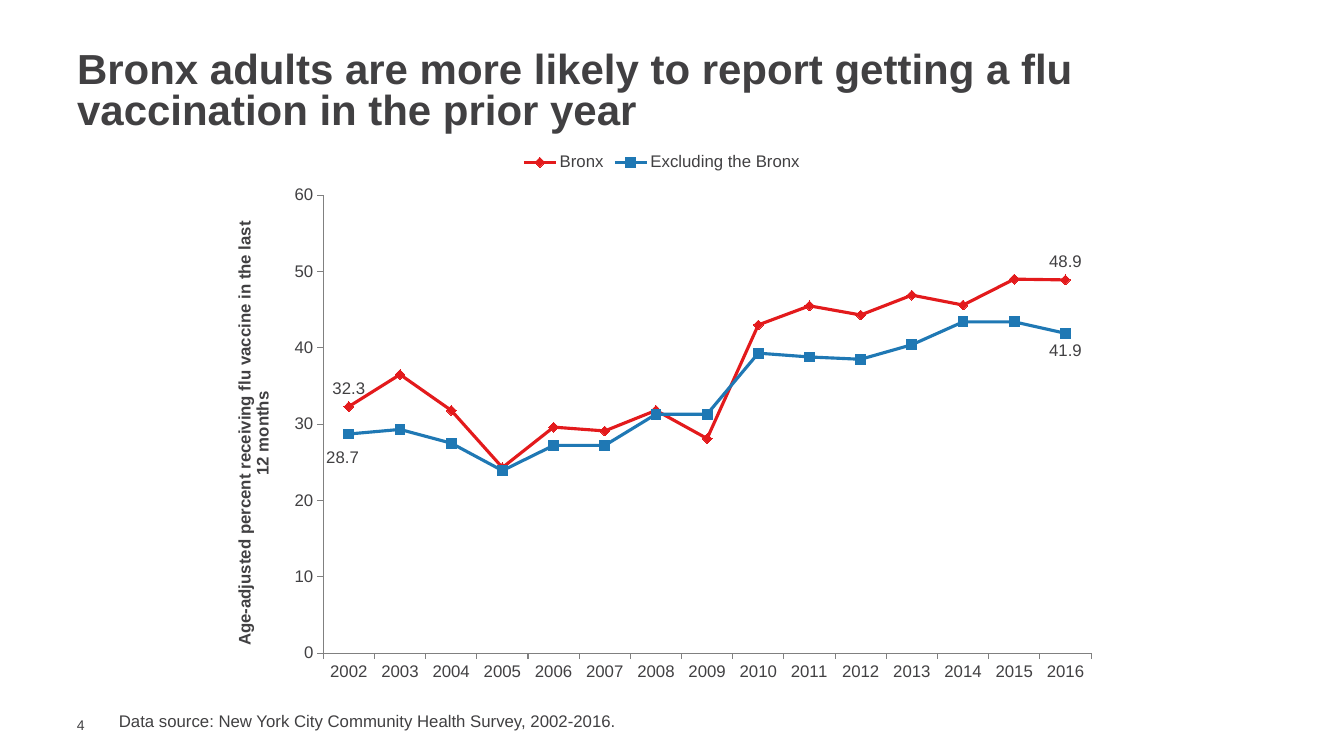
from dataclasses import dataclass

from lxml import etree
from pptx import Presentation
from pptx.chart.data import CategoryChartData
from pptx.dml.color import RGBColor
from pptx.enum.chart import (XL_CHART_TYPE, XL_LABEL_POSITION, XL_LEGEND_POSITION,
                             XL_MARKER_STYLE, XL_TICK_MARK)
from pptx.enum.text import MSO_ANCHOR, PP_ALIGN
from pptx.oxml.ns import qn
from pptx.util import Pt

LINE_MARKERS = XL_CHART_TYPE.LINE_MARKERS
LEGEND_TOP = XL_LEGEND_POSITION.TOP
ABOVE, BELOW = XL_LABEL_POSITION.ABOVE, XL_LABEL_POSITION.BELOW
DIAMOND, SQUARE = XL_MARKER_STYLE.DIAMOND, XL_MARKER_STYLE.SQUARE
OUTSIDE = XL_TICK_MARK.OUTSIDE
LEFT = PP_ALIGN.LEFT
MIDDLE, TOP = MSO_ANCHOR.MIDDLE, MSO_ANCHOR.TOP
PX = 914400 / 100.8


@dataclass(frozen=True)
class Theme:
    font: str = "Arial"
    text: RGBColor = RGBColor(0x41, 0x40, 0x42)
    axis: RGBColor = RGBColor(0x80, 0x80, 0x80)
    bronx: RGBColor = RGBColor(0xE3, 0x1A, 0x1C)
    others: RGBColor = RGBColor(0x1F, 0x78, 0xB4)
    title_size: int = 30
    chart_size: int = 12
    number_size: int = 10


THEME = Theme()


def style_font(font, size, bold=False):
    font.name = THEME.font
    font.size = Pt(size)
    font.bold = bold
    font.color.rgb = THEME.text


def set_layout(parent, index, **values):
    """Insert a manual chart layout at the given child index."""
    layout = etree.Element(qn("c:layout"))
    manual = etree.SubElement(layout, qn("c:manualLayout"))
    for tag, value in values.items():
        etree.SubElement(manual, qn(f"c:{tag}")).set("val", str(value))
    for old in parent.findall(qn("c:layout")):
        parent.remove(old)
    parent.insert(index, layout)


presentation = Presentation()
presentation.slide_width = round(1344 * PX)
presentation.slide_height = round(756 * PX)
slide = presentation.slides.add_slide(presentation.slide_layouts[5])

# Title, slide number and data source
number_box = slide.shapes.add_textbox(0, 0, 0, 0)
source_box = slide.shapes.add_textbox(0, 0, 0, 0)
texts = [
    (slide.shapes.title, (67, 47, 1210, 92), MIDDLE, THEME.title_size, True,
     "Bronx adults are more likely to report getting a flu vaccination in the prior year"),
    (number_box, (67, 716, 43, 17), MIDDLE, THEME.number_size, False, "4"),
    (source_box, (109, 706, 1000, 30), TOP, THEME.chart_size, False,
     "Data source: New York City Community Health Survey, 2002-2016."),
]
for shape, place, anchor, size, bold, text in texts:
    shape.left, shape.top, shape.width, shape.height = [round(v * PX) for v in place]
    frame = shape.text_frame
    frame.word_wrap = True
    frame.vertical_anchor = anchor
    paragraph = frame.paragraphs[0]
    paragraph.alignment = LEFT
    run = paragraph.add_run()
    run.text = text
    style_font(run.font, size, bold)
slide.shapes.title.text_frame.paragraphs[0].line_spacing = 0.8
number_frame = number_box.text_frame
number_frame.margin_top = number_frame.margin_bottom = number_frame.margin_right = 0

# Chart data
chart_data = CategoryChartData()
chart_data.categories = [str(year) for year in range(2002, 2017)]
chart_data.add_series("Bronx", [32.3, 36.5, 31.8, 24.3, 29.6, 29.1, 31.8, 28.1,
                                43, 45.5, 44.3, 46.9, 45.6, 49, 48.9])
chart_data.add_series("Excluding the Bronx", [28.7, 29.3, 27.5, 23.9, 27.2, 27.2, 31.3, 31.3,
                                              39.3, 38.8, 38.5, 40.4, 43.4, 43.4, 41.9])
chart = slide.shapes.add_chart(LINE_MARKERS, *[round(v * PX) for v in (214, 142, 896, 549)],
                               chart_data).chart
style_font(chart.font, THEME.number_size)
chart.has_title = False
chart.has_legend = True
chart.legend.position = LEGEND_TOP
chart.legend.include_in_layout = False
style_font(chart.legend.font, THEME.chart_size)
plot = chart.plots[0]
plot.vary_by_categories = False
plot_area = chart.element.find(".//" + qn("c:plotArea"))
set_layout(plot_area, 0, layoutTarget="inner", xMode="edge", yMode="edge",
           x=0.122, y=0.097, w=0.857, h=0.834)

# Axes
for axis in (chart.category_axis, chart.value_axis):
    axis.has_major_gridlines = False
    axis.major_tick_mark = OUTSIDE
    axis.format.line.color.rgb = THEME.axis
    axis.format.line.width = Pt(0.75)
    style_font(axis.tick_labels.font, THEME.chart_size)
value_axis = chart.value_axis
value_axis.minimum_scale, value_axis.maximum_scale, value_axis.major_unit = 0, 60, 10
title_frame = value_axis.axis_title.text_frame
run = title_frame.paragraphs[0].add_run()
run.text = "Age-adjusted percent receiving flu vaccine in the last 12 months"
style_font(run.font, THEME.chart_size, True)
body = plot_area.find(".//" + qn("a:bodyPr"))
for body in plot_area.findall(qn("c:valAx") + "/" + qn("c:title") + "//" + qn("a:bodyPr")):
    body.set("rot", "-5400000")
    body.set("vert", "horz")

# Lines, markers and labels on the first and last years
looks = [(THEME.bronx, DIAMOND, ABOVE), (THEME.others, SQUARE, BELOW)]
for series, (color, marker, position) in zip(plot.series, looks):
    series.smooth = False
    series.format.line.color.rgb = color
    series.format.line.width = Pt(2.25)
    series.marker.style = marker
    series.marker.size = 7
    series.marker.format.fill.solid()
    series.marker.format.fill.fore_color.rgb = color
    series.marker.format.line.color.rgb = color
    series.data_labels.show_value = False
    for index in (0, 14):
        label = series.points[index].data_label
        style_font(label.font, THEME.chart_size)
        label.position = position

# The first lower label sits a little off its point, with a leader line
labels = plot_area.findall(".//" + qn("c:dLbls"))[1]
set_layout(labels.find(qn("c:dLbl")), 1, x=-0.007, y=0.01)
C15 = "http://schemas.microsoft.com/office/drawing/2012/chart"
extension_list = etree.SubElement(labels, qn("c:extLst"))
extension = etree.SubElement(extension_list, qn("c:ext"), nsmap={"c15": C15},
                             uri="{CE6537A1-D6FC-4f65-9D91-7224C49458BB}")
etree.SubElement(extension, f"{{{C15}}}showLeaderLines").set("val", "1")

presentation.save("out.pptx")
